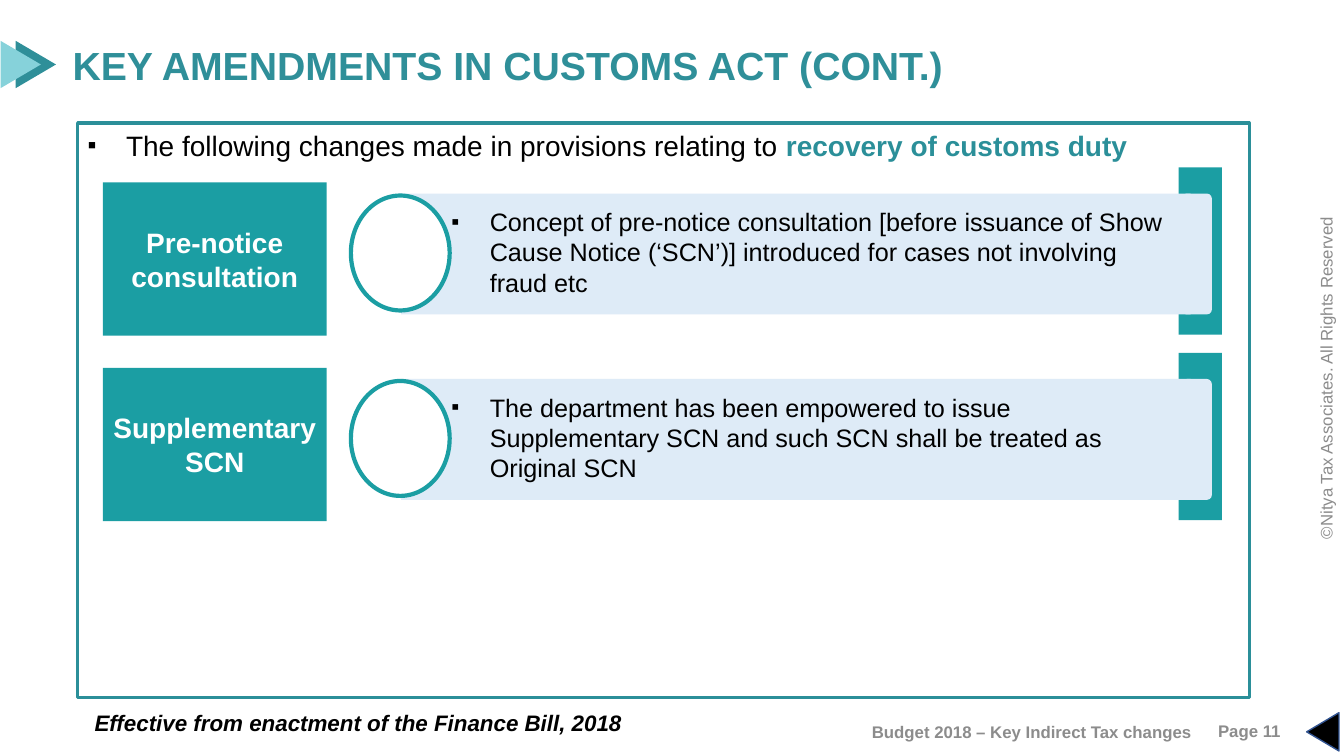
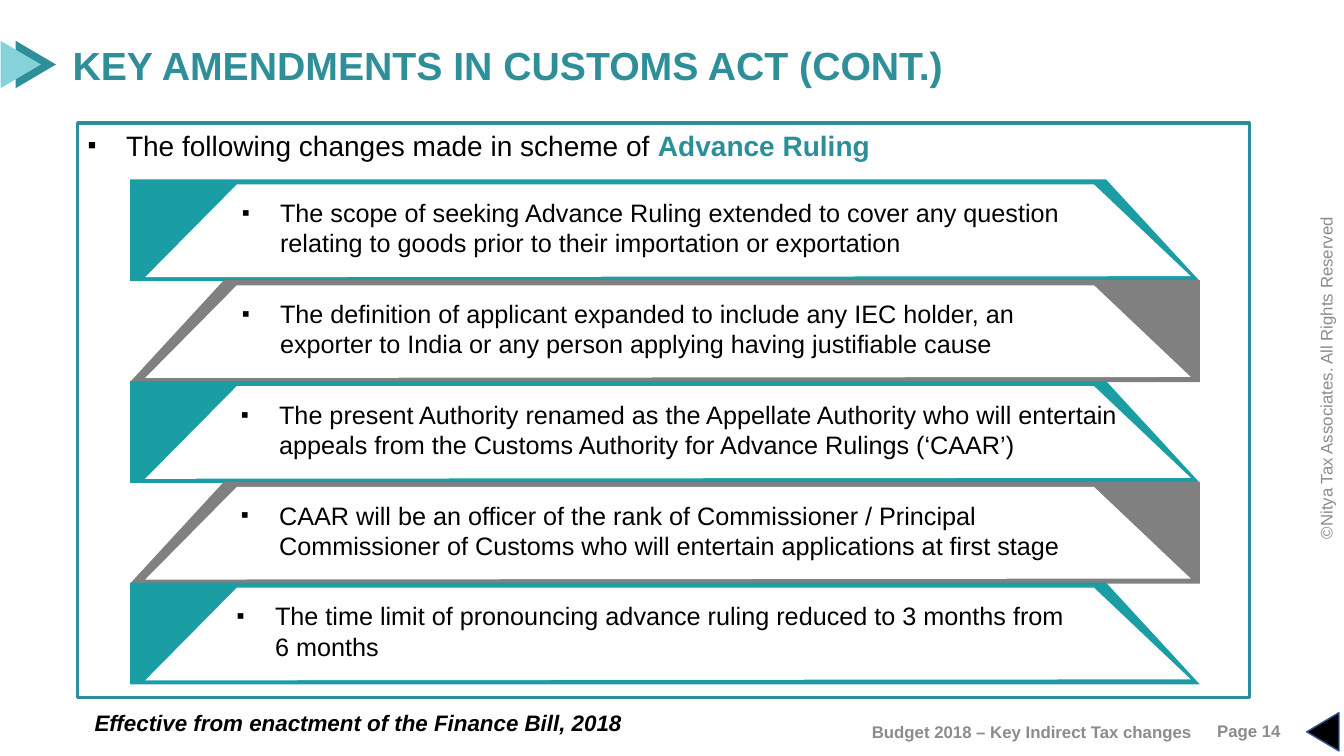
"""Build two slides on customs act amendments."""
from lxml import etree
from pptx import Presentation
from pptx.dml.color import RGBColor
from pptx.enum.shapes import MSO_SHAPE
from pptx.enum.text import MSO_ANCHOR, MSO_AUTO_SIZE, PP_ALIGN
from pptx.oxml.ns import qn
from pptx.util import Inches, Pt

RECT, ROUNDED, OVAL = MSO_SHAPE.RECTANGLE, MSO_SHAPE.ROUNDED_RECTANGLE, MSO_SHAPE.OVAL
TRIANGLE, EXTRACT = MSO_SHAPE.ISOSCELES_TRIANGLE, MSO_SHAPE.FLOWCHART_EXTRACT
TOP, MIDDLE = MSO_ANCHOR.TOP, MSO_ANCHOR.MIDDLE
LEFT, CENTER, RIGHT = PP_ALIGN.LEFT, PP_ALIGN.CENTER, PP_ALIGN.RIGHT
FIXED = MSO_AUTO_SIZE.NONE

FONT = "Arial"
COLORS = {name: RGBColor.from_string(value) for name, value in {
    "title": "2F8F99", "accent": "2B8F99", "light": "86D2DA", "teal": "1B9EA3",
    "pale": "DEEBF7", "gray": "808080", "footer": "8C8C8C", "navy": "325491",
    "black": "000000", "white": "FFFFFF"}.items()}


def write(frame, text, size, color="black", bold=False, align=LEFT, anchor=TOP, bullet=False):
    frame.word_wrap = True
    frame.auto_size = FIXED
    frame.vertical_anchor = anchor
    paragraph = frame.paragraphs[0]
    paragraph.add_run().text = text
    if bullet:
        properties = paragraph._p.get_or_add_pPr()
        properties.set("marL", str(Inches(0.38)))
        properties.set("indent", str(Inches(-0.38)))
        etree.SubElement(properties, qn("a:buSzPct")).set("val", "90000")
        etree.SubElement(properties, qn("a:buFont")).set("typeface", FONT)
        etree.SubElement(properties, qn("a:buChar")).set("char", "▪")
    paragraph.alignment = align
    paragraph.space_before = Pt(0)
    paragraph.font.name = FONT
    paragraph.font.size = Pt(size)
    paragraph.font.bold = bold
    paragraph.font.color.rgb = COLORS[color]
    return paragraph


def paint(shape, fill, line=None, weight=1, rotation=0):
    shape.shadow.inherit = False
    shape.rotation = rotation
    shape.fill.solid()
    shape.fill.fore_color.rgb = COLORS[fill]
    if line:
        shape.line.color.rgb = COLORS[line]
        shape.line.width = Pt(weight)
    else:
        shape.line.fill.background()


prs = Presentation()
prs.slide_width, prs.slide_height = Inches(13.33), Inches(7.5)

pages = [
    ("Page 11", "The following changes made in provisions relating to ", "recovery of customs duty"),
    ("Page 14", "The following changes made in scheme of ", "Advance Ruling"),
]
slides = []
for page, intro, topic in pages:
    slide = prs.slides.add_slide(prs.slide_layouts[1])
    slides.append(slide)
    title, body = slide.placeholders
    title.left, title.top, title.width, title.height = map(Inches, (0.62, 0.36, 11, 0.57))
    write(title.text_frame, "KEY AMENDMENTS IN CUSTOMS ACT (CONT.)", 28, "title", True)

    body.left, body.top, body.width, body.height = map(Inches, (0.77, 1.22, 11.62, 5.7))
    body.line.color.rgb = COLORS["accent"]
    body.line.width = Pt(2.25)
    heading = write(body.text_frame, intro, 20, bullet=True)
    topic_run = heading.add_run()
    topic_run.text = topic
    topic_run.font.bold = True
    topic_run.font.color.rgb = COLORS["accent"]

    for left, color in ((0.12, "title"), (-0.03, "light")):
        arrow = slide.shapes.add_shape(TRIANGLE, *map(Inches, (left, 0.44, 0.47, 0.4)))
        paint(arrow, color, rotation=90)
    back = slide.shapes.add_shape(EXTRACT, *map(Inches, (12.93, 7.1, 0.38, 0.32)))
    paint(back, "black", "navy", rotation=270)

    rights = slide.shapes.add_textbox(*map(Inches, (10.9, 3.55, 4.5, 0.4)))
    rights.rotation = 270
    write(rights.text_frame, "©Nitya Tax Associates. All Rights Reserved", 12, "footer",
          align=CENTER, anchor=MIDDLE)
    for box, text in (((11.84, 7.05, 0.96, 0.4), page),
                      ((7.79, 7.06, 4.13, 0.4), "Budget 2018 – Key Indirect Tax changes")):
        footer = slide.shapes.add_textbox(*map(Inches, box))
        write(footer.text_frame, text, 12, "footer", True, RIGHT, MIDDLE)
    effective = slide.shapes.add_textbox(*map(Inches, (0.84, 6.97, 6.5, 0.4)))
    note = write(effective.text_frame, "Effective from enactment of the Finance Bill, 2018", 16,
                 bold=True, anchor=MIDDLE)
    note.font.italic = True

recovery, ruling = slides

changes = [
    ("Pre-notice consultation",
     "Concept of pre-notice consultation [before issuance of Show Cause Notice (‘SCN’)] "
     "introduced for cases not involving fraud etc"),
    ("Supplementary SCN",
     "The department has been empowered to issue Supplementary SCN and such SCN shall be "
     "treated as Original SCN"),
]
for row, (label, detail) in enumerate(changes):
    top = 1.66 + 1.84 * row
    label_box = recovery.shapes.add_shape(RECT, *map(Inches, (1.02, top + 0.15, 2.22, 1.52)))
    paint(label_box, "teal")
    write(label_box.text_frame, label, 20, "white", True, CENTER, MIDDLE)
    for preset, box, fill, line in (
            (RECT, (11.69, top, 0.43, 1.66), "teal", None),
            (RECT, (3.98, top + 0.26, 7.83, 1.2), "pale", None),
            (OVAL, (3.48, top + 0.28, 0.98, 1.14), "white", "teal"),
            (ROUNDED, (11.72, top + 0.26, 0.3, 1.2), "pale", None)):
        paint(recovery.shapes.add_shape(preset, *map(Inches, box)), fill, line, 3)
    detail_box = recovery.shapes.add_textbox(*map(Inches, (4.38, top + 0.34, 7.44, 1.14)))
    write(detail_box.text_frame, detail, 18, bullet=True)

rulings = [
    (2.3, 8.47, "The scope of seeking Advance Ruling extended to cover any question relating "
     "to goods prior to their importation or exportation"),
    (2.3, 8.47, "The definition of applicant expanded to include any IEC holder, an exporter "
     "to India or any person applying having justifiable cause"),
    (2.29, 8.91, "The present Authority renamed as the Appellate Authority who will entertain "
     "appeals from the Customs Authority for Advance Rulings (‘CAAR’)"),
    (2.29, 8.47, "CAAR will be an officer of the rank of Commissioner / Principal Commissioner "
     "of Customs who will entertain applications at first stage"),
    (2.25, 8.47, "The time limit of pronouncing advance ruling reduced to 3 months from "
     "6 months"),
]
for row, (left, width, text) in enumerate(rulings):
    top = 1.78 + row
    bottom = top + 1.01
    if row % 2:
        color, band = "gray", [(11.9, top), (2.22, top), (1.29, bottom), (11.9, bottom)]
    else:
        color, band = "teal", [(1.29, top), (10.97, top), (11.9, bottom), (1.29, bottom)]
    panel = [(1.44, top + 0.97), (2.35, top + 0.05), (10.85, top + 0.05), (11.81, top + 0.96)]
    for fill, outline in ((color, band), ("white", panel)):
        start, *others = [(Inches(x), Inches(y)) for x, y in outline]
        builder = ruling.shapes.build_freeform(*start)
        builder.add_line_segments(others)
        paint(builder.convert_to_shape(), fill)
    ruling_box = ruling.shapes.add_textbox(*map(Inches, (left, top + 0.13, width, 0.87)))
    write(ruling_box.text_frame, text, 18, bullet=True)

prs.save("out.pptx")
